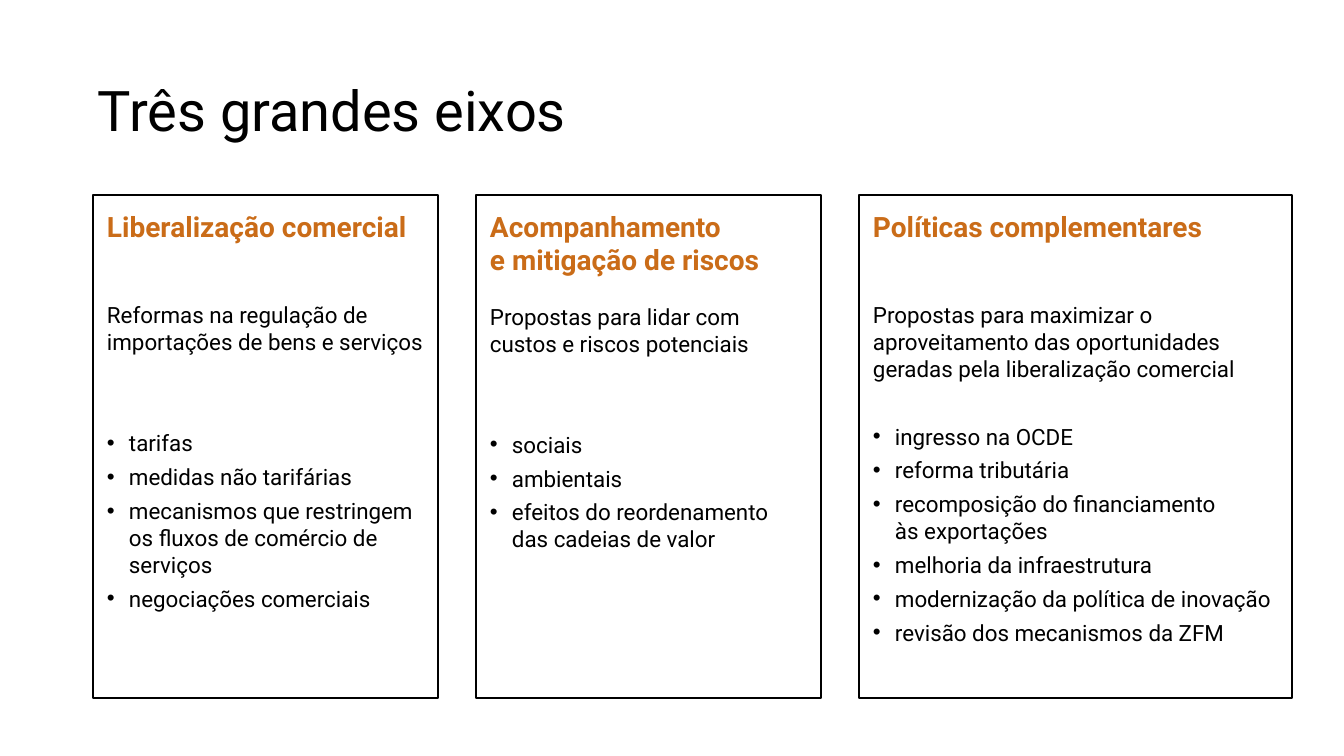
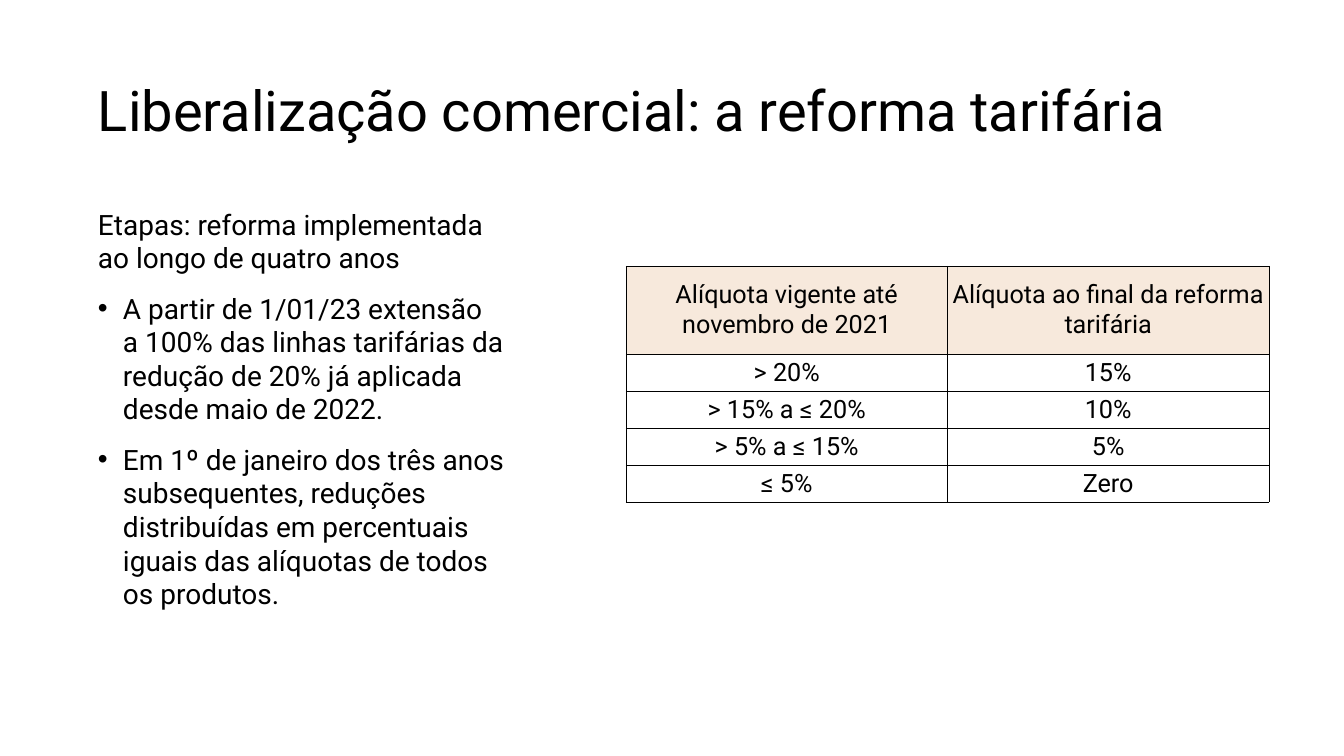
import pptx
import pptx.dml.color
import pptx.enum.shapes
import pptx.enum.text
import pptx.oxml
import pptx.oxml.ns
import pptx.util

EMU_PER_PX = 914400 / 100.8
FONT = "Roboto"
COLORS = {"text": "000000", "accent": "CA6C18", "header": "F7E9DC", "cell": "FFFFFF"}
LEFT = 93
PANEL_GAP = 38

PANELS = [
    {
        "width": 345,
        "heading": "Liberalização comercial",
        "summary": "Reformas na regulação de importações de bens e serviços",
        "gaps": (42, 53),
        "topics": [
            "tarifas",
            "medidas não tarifárias",
            "mecanismos que restringem os fluxos de comércio de serviços",
            "negociações comerciais",
        ],
    },
    {
        "width": 345,
        "heading": "Acompanhamento\ne mitigação de riscos",
        "summary": "Propostas para lidar com custos e riscos potenciais",
        "gaps": (19, 53),
        "topics": [
            "sociais",
            "ambientais",
            "efeitos do reordenamento das cadeias de valor",
        ],
    },
    {
        "width": 433,
        "heading": "Políticas complementares",
        "summary": "Propostas para maximizar o aproveitamento das oportunidades "
                   "geradas pela liberalização comercial",
        "gaps": (42, 29),
        "topics": [
            "ingresso na OCDE",
            "reforma tributária",
            "recomposição do financiamento\nàs exportações",
            "melhoria da infraestrutura",
            "modernização da política de inovação",
            "revisão dos mecanismos da ZFM",
        ],
    },
]

STAGES_INTRO = "Etapas: reforma implementada\nao longo de quatro anos"
STAGES = [
    "A partir de 1/01/23 extensão\na 100% das linhas tarifárias da redução de 20% já aplicada\n"
    "desde maio de 2022.",
    "Em 1º de janeiro dos três anos subsequentes, reduções distribuídas em percentuais\n"
    "iguais das alíquotas de todos\nos produtos.",
]

RATES = [
    ("Alíquota vigente até novembro de 2021", "Alíquota ao final da reforma tarifária"),
    ("> 20%", "15%"),
    ("> 15% a ≤ 20%", "10%"),
    ("> 5% a ≤ 15%", "5%"),
    ("≤ 5%", "Zero"),
]


def px(length):
    """Turn pixels into EMU."""
    return pptx.util.Emu(round(length * EMU_PER_PX))


def rgb(name):
    """Look up a named colour."""
    return pptx.dml.color.RGBColor.from_string(COLORS[name])


def xml(markup):
    """Parse one DrawingML element."""
    head, mark, rest = markup.partition(" ") if " " in markup else markup.partition("/>")
    return pptx.oxml.parse_xml(f"{head} {pptx.oxml.ns.nsdecls('a')}{mark}{rest}")


def place(shape, box):
    """Move a shape to a box of left, top, width and height."""
    shape.left, shape.top, shape.width, shape.height = map(px, box)


def set_frame(shape, inset, anchor):
    """Set wrapping, insets and anchor of a shape's text and return its frame."""
    frame = shape.text_frame
    frame.word_wrap = True
    frame.auto_size = pptx.enum.text.MSO_AUTO_SIZE.NONE
    frame.vertical_anchor = anchor
    frame.margin_left = frame.margin_top = frame.margin_right = frame.margin_bottom = px(inset)
    return frame


def write(paragraph, text, size, color="text", bold=False, before=0, hang=0, centered=False):
    """Write one paragraph, bulleted when it has a hanging indent."""
    paragraph.text = text
    paragraph.alignment = (pptx.enum.text.PP_ALIGN.CENTER if centered
                           else pptx.enum.text.PP_ALIGN.LEFT)
    paragraph.space_before = pptx.util.Pt(before)
    properties = paragraph._p.get_or_add_pPr()
    properties.set("marL", str(px(hang)))
    properties.set("indent", str(px(-hang)))
    if hang:
        properties.append(xml('<a:buFont typeface="Arial"/>'))
        properties.append(xml('<a:buChar char="•"/>'))
    else:
        properties.append(xml("<a:buNone/>"))
    font = paragraph.font
    font.name = FONT
    font.size = pptx.util.Pt(size)
    font.bold = bold
    font.color.rgb = rgb(color)


def add_titled_slide(deck, title):
    """Add a slide with the shared title style."""
    slide = deck.slides.add_slide(deck.slide_layouts[1])
    place(slide.shapes.title, (LEFT, 40, 1160, 146))
    frame = set_frame(slide.shapes.title, 5, pptx.enum.text.MSO_ANCHOR.MIDDLE)
    write(frame.paragraphs[0], title, 40)
    frame.paragraphs[0].line_spacing = 0.9
    return slide


def fill_panel(panel, box, content):
    """Outline a panel and write its heading, summary and topics."""
    place(panel, box)
    panel.shadow.inherit = False
    panel.fill.background()
    panel.line.color.rgb = rgb("text")
    panel.line.width = pptx.util.Pt(1)
    frame = set_frame(panel, 14, pptx.enum.text.MSO_ANCHOR.TOP)
    summary_gap, topics_gap = content["gaps"]
    write(frame.paragraphs[0], content["heading"], 20, "accent", bold=True)
    write(frame.add_paragraph(), content["summary"], 16, before=summary_gap)
    for index, topic in enumerate(content["topics"]):
        write(frame.add_paragraph(), topic, 16, before=5 if index else topics_gap, hang=22)


def fill_stages(body, box):
    """Write the reform stages."""
    place(body, box)
    frame = set_frame(body, 5, pptx.enum.text.MSO_ANCHOR.TOP)
    write(frame.paragraphs[0], STAGES_INTRO, 20)
    for stage in STAGES:
        write(frame.add_paragraph(), stage, 20, before=12, hang=25)


def style_cell(cell, text, fill):
    """Write one bordered, centred cell."""
    cell.margin_left = cell.margin_top = cell.margin_right = cell.margin_bottom = 0
    cell.vertical_anchor = pptx.enum.text.MSO_ANCHOR.MIDDLE
    write(cell.text_frame.paragraphs[0], text, 18, centered=True)
    cell.fill.solid()
    cell.fill.fore_color.rgb = rgb(fill)
    properties = cell._tc.get_or_add_tcPr()
    for index, side in enumerate("LRTB"):
        properties.insert(index, xml(
            f'<a:ln{side} w="3175"><a:solidFill><a:srgbClr val="{COLORS["text"]}"/>'
            f"</a:solidFill></a:ln{side}>"))


def add_rates(slide, box, header_height):
    """Add the table of tariff rates."""
    left, top, width, height = box
    rates = slide.shapes.add_table(len(RATES), 2, *map(px, box)).table
    rates.first_row = rates.horz_banding = False
    for column in rates.columns:
        column.width = px(width / 2)
    row_height = (height - header_height) / (len(RATES) - 1)
    for index, row in enumerate(RATES):
        rates.rows[index].height = px(row_height if index else header_height)
        for cell, text in zip(rates.rows[index].cells, row):
            style_cell(cell, text, "cell" if index else "header")


def build_axes(deck):
    """Build the slide of the three axes."""
    slide = add_titled_slide(deck, "Três grandes eixos")
    left = LEFT
    for index, content in enumerate(PANELS):
        box = (left, 195, content["width"], 503)
        panel = slide.shapes.add_shape(
            pptx.enum.shapes.MSO_SHAPE.RECTANGLE, *map(px, box)) if index else slide.placeholders[1]
        fill_panel(panel, box, content)
        left += content["width"] + PANEL_GAP


def build_reform(deck):
    """Build the slide of the tariff reform."""
    slide = add_titled_slide(deck, "Liberalização comercial: a reforma tarifária")
    fill_stages(slide.placeholders[1], (LEFT, 202, 469, 480))
    add_rates(slide, (626, 266, 643, 236), 88)


def main():
    """Build and save the deck."""
    deck = pptx.Presentation()
    deck.slide_width, deck.slide_height = px(1344), px(756)
    build_axes(deck)
    build_reform(deck)
    deck.save("out.pptx")


if __name__ == "__main__":
    main()
